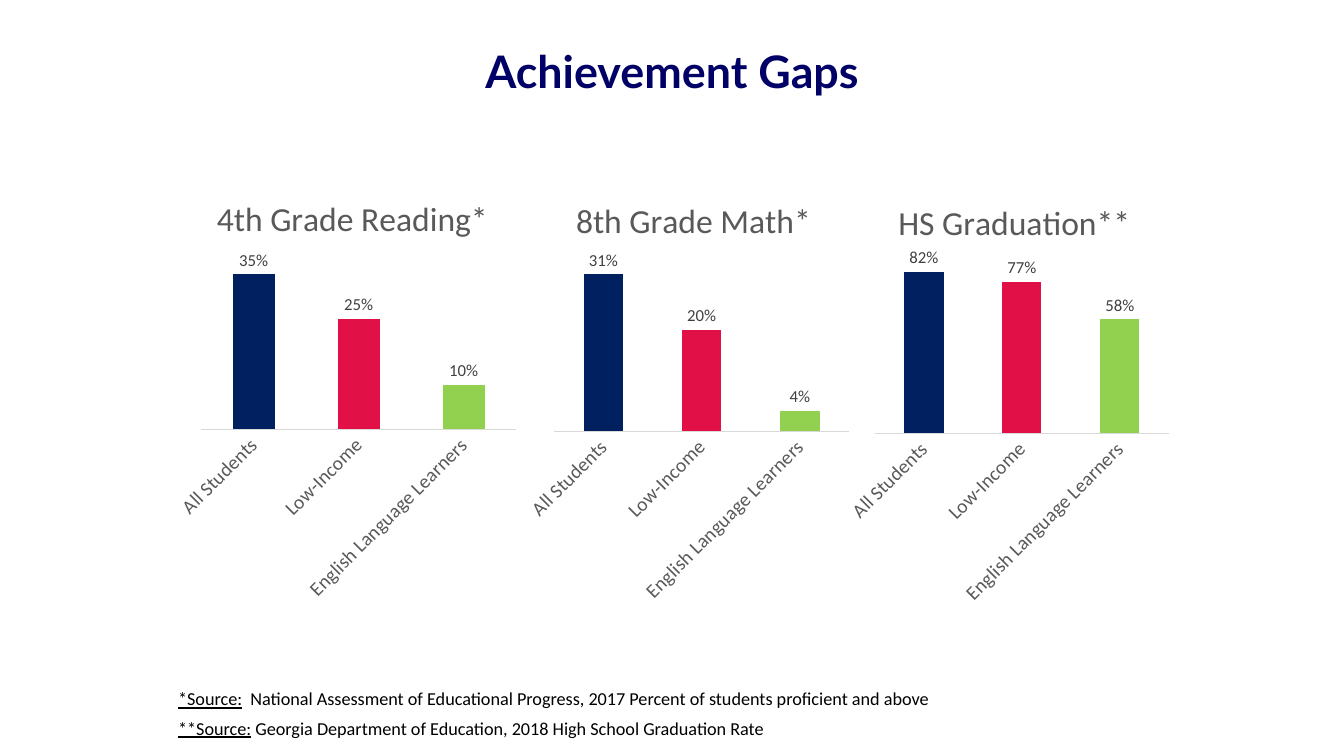
from lxml.etree import SubElement
from pptx import Presentation
from pptx.chart.data import CategoryChartData
from pptx.dml.color import RGBColor
from pptx.enum.chart import XL_CHART_TYPE, XL_LABEL_POSITION, XL_TICK_MARK
from pptx.enum.text import MSO_ANCHOR, PP_ALIGN
from pptx.oxml.ns import qn
from pptx.util import Cm, Pt

TITLE_BLUE = RGBColor(0x00, 0x00, 0x66)
NAVY = RGBColor(0x00, 0x20, 0x60)
RED = RGBColor(0xE1, 0x11, 0x48)
GREEN = RGBColor(0x92, 0xD0, 0x50)
BLACK = RGBColor(0x00, 0x00, 0x00)
LABEL_GREY = RGBColor(0x40, 0x40, 0x40)
TEXT_GREY = RGBColor(0x59, 0x59, 0x59)
AXIS_GREY = RGBColor(0xD9, 0xD9, 0xD9)

STUDENT_GROUPS = ("All Students", "Low-Income", "English Language Learners")
CHART_HEIGHT = 11.15

# title, shares, axis maximum, left, width, title width, plot left, plot width
CHARTS = (
    ("4th Grade Reading*", (0.35, 0.25, 0.10), 0.40, 4.24, 8.94, 6.8, 0.83, 7.94),
    ("8th Grade Math*", (0.31, 0.20, 0.04), 0.35, 13.06, 8.51, 5.9, 0.91, 7.43),
    ("HS Graduation**", (0.82, 0.77, 0.58), 0.90, 21.13, 8.51, 5.8, 0.92, 7.41),
)

SOURCES = (
    ("*Source:", "  National Assessment of Educational Progress, "
                 "2017 Percent of students proficient and above"),
    ("**Source:", " Georgia Department of Education, 2018 High School Graduation Rate"),
)


def style_font(font, color, **values):
    for name, value in values.items():
        setattr(font, name, value)
    font.color.rgb = color


def place_manually(parent, index, **fractions):
    """Fix a chart part at fractions of the chart's width and height."""
    for old in parent.findall(qn("c:layout")):
        parent.remove(old)
    layout = parent.makeelement(qn("c:layout"))
    parent.insert(index, layout)
    manual = SubElement(layout, qn("c:manualLayout"))
    if "w" in fractions:
        SubElement(manual, qn("c:layoutTarget")).set("val", "inner")
    for side in ("xMode", "yMode"):
        SubElement(manual, qn(f"c:{side}")).set("val", "edge")
    for name, value in fractions.items():
        SubElement(manual, qn(f"c:{name}")).set("val", f"{value:.4f}")


class Slide:
    heading_font = "Lato"
    body_font = "Calibri"

    def __init__(self, deck):
        self.page = deck.slides.add_slide(deck.slide_layouts[6])

    def text_box(self, left, top, width, height, spacing):
        """Add a wrapping box and return its frame and first paragraph."""
        box = self.page.shapes.add_textbox(Cm(left), Cm(top), Cm(width), Cm(height))
        frame = box.text_frame
        frame.word_wrap = True
        para = frame.paragraphs[0]
        para.line_spacing = spacing
        return frame, para

    def heading(self, text):
        frame, para = self.text_box(4.24, 1.12, 25.4, 1.5, 0.9)
        frame.vertical_anchor = MSO_ANCHOR.MIDDLE
        para.alignment = PP_ALIGN.CENTER
        span = para.add_run()
        span.text = text
        style_font(span.font, TITLE_BLUE, name=self.heading_font, size=Pt(32), bold=True)

    def source_note(self, top, label, text):
        _, para = self.text_box(4.24, top, 22.23, 0.64, 0.6)
        for words, underlined in ((label, True), (text, False)):
            span = para.add_run()
            span.text = words
            style_font(span.font, BLACK, name=self.body_font, size=Pt(13),
                       underline=underlined)

    def column_chart(self, top, title, shares, maximum, left, width,
                     title_width, plot_left, plot_width):
        data = CategoryChartData(number_format="0%")
        data.categories = STUDENT_GROUPS
        data.add_series("Series 1", shares)
        chart = self.page.shapes.add_chart(
            XL_CHART_TYPE.COLUMN_CLUSTERED,
            Cm(left), Cm(top), Cm(width), Cm(CHART_HEIGHT), data).chart
        style_font(chart.font, BLACK, name=self.body_font, size=Pt(10))
        chart.has_legend = False

        chart.has_title = True
        span = chart.chart_title.text_frame.paragraphs[0].add_run()
        span.text = title
        style_font(span.font, TEXT_GREY, name=self.body_font, size=Pt(24), bold=False)
        place_manually(chart.chart_title._element, 1,
                       x=(width - title_width) / 2 / width, y=0.05)
        plot_area = chart._chartSpace.find(f".//{qn('c:plotArea')}")
        place_manually(plot_area, 0, x=plot_left / width, y=0.19,
                       w=plot_width / width, h=0.4)

        self.style_axes(chart, maximum)
        self.style_columns(chart.plots[0])

    def style_axes(self, chart, maximum):
        values = chart.value_axis
        for name, value in {"minimum_scale": 0, "maximum_scale": maximum,
                            "has_major_gridlines": False, "visible": False}.items():
            setattr(values, name, value)
        groups = chart.category_axis
        groups.major_tick_mark = groups.minor_tick_mark = XL_TICK_MARK.NONE
        groups.format.line.color.rgb = AXIS_GREY
        groups.format.line.width = Pt(0.75)
        style_font(groups.tick_labels.font, TEXT_GREY, name=self.body_font, size=Pt(14))
        body = groups._element.find(f"{qn('c:txPr')}/{qn('a:bodyPr')}")
        body.set("rot", "-2700000")
        body.set("vert", "horz")

    def style_columns(self, plot):
        for name, value in {"gap_width": 150, "overlap": -25,
                            "vary_by_categories": False,
                            "has_data_labels": True}.items():
            setattr(plot, name, value)
        labels = plot.data_labels
        for name, value in {"show_value": True, "number_format": "0%",
                            "number_format_is_linked": False,
                            "position": XL_LABEL_POSITION.OUTSIDE_END}.items():
            setattr(labels, name, value)
        style_font(labels.font, LABEL_GREY, name=self.body_font, size=Pt(12))
        for index, color in enumerate((NAVY, RED, GREEN)):
            fill = plot.series[0].points[index].format.fill
            fill.solid()
            fill.fore_color.rgb = color


def main():
    deck = Presentation()
    deck.slide_width, deck.slide_height = Cm(33.87), Cm(19.05)
    slide = Slide(deck)
    slide.heading("Achievement Gaps")
    for index, chart in enumerate(CHARTS):
        slide.column_chart(4.24 + 0.05 * index, *chart)
    for index, source in enumerate(SOURCES):
        slide.source_note(17.4 + 0.74 * index, *source)
    deck.save("out.pptx")


if __name__ == "__main__":
    main()
